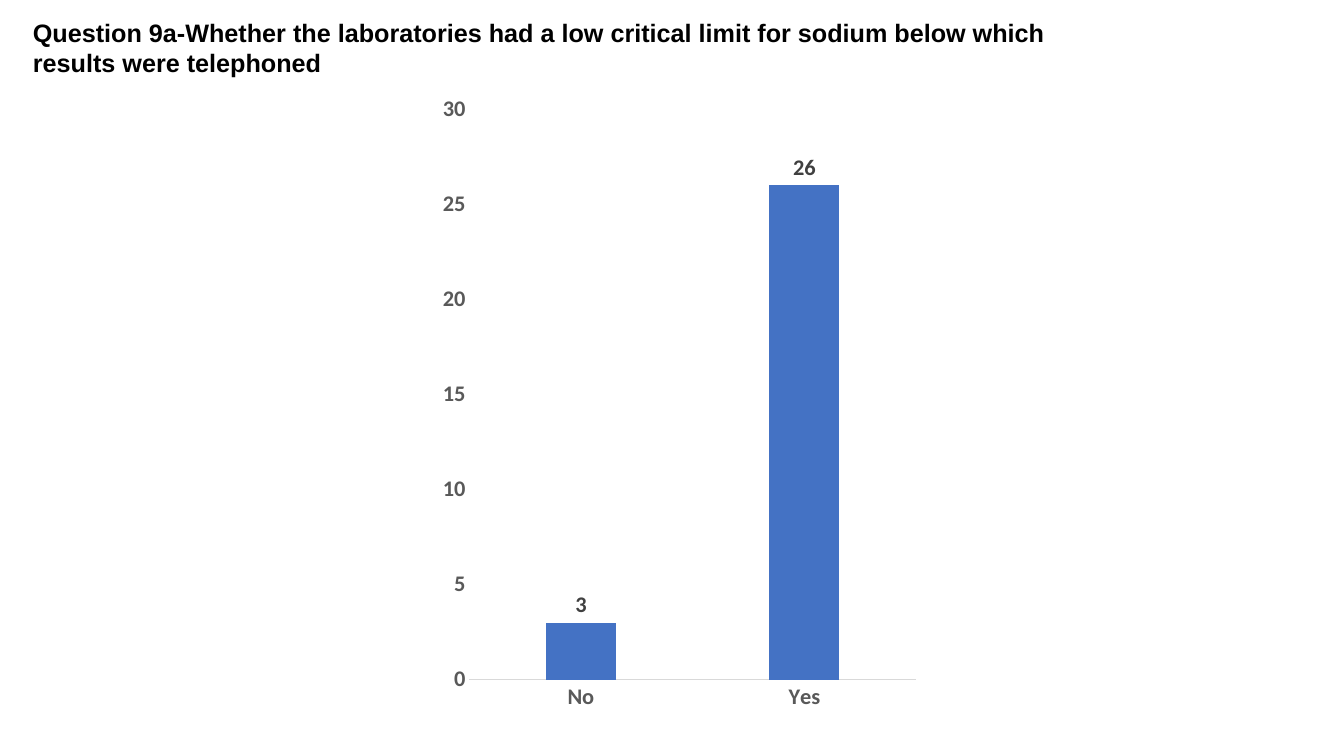
from lxml.etree import SubElement
from pptx import Presentation
from pptx.chart.data import CategoryChartData
from pptx.dml.color import RGBColor
from pptx.enum.chart import XL_CHART_TYPE, XL_LABEL_POSITION, XL_TICK_MARK
from pptx.enum.text import MSO_AUTO_SIZE
from pptx.oxml.ns import qn
from pptx.util import Cm, Pt


def color(hex_code):
    """Turn a hex string into a colour."""
    return RGBColor.from_string(hex_code)


def style_font(font, name, size, hex_code):
    """Apply a bold typeface, size and colour."""
    font.name = name
    font.size = Pt(size)
    font.bold = True
    font.color.rgb = color(hex_code)


def set_plot_layout(chart, x, y, w, h):
    """Fix the inner plot area as fractions of the chart."""
    plot_area = chart.plot_area if hasattr(chart, "plot_area") else chart.element.chart.plotArea
    for previous in plot_area.findall(qn("c:layout")):
        plot_area.remove(previous)
    layout = SubElement(plot_area, qn("c:layout"))
    plot_area.insert(0, layout)
    manual = SubElement(layout, qn("c:manualLayout"))
    settings = {"layoutTarget": "inner", "xMode": "edge", "yMode": "edge",
                "x": x, "y": y, "w": w, "h": h}
    for tag, value in settings.items():
        SubElement(manual, qn(f"c:{tag}")).set("val", str(value))


def add_question(slide, left, top, width, height):
    """Write the survey question in the given box."""
    question = slide.shapes.add_textbox(left, top, width, height).text_frame
    question.word_wrap = True
    question.auto_size = MSO_AUTO_SIZE.SHAPE_TO_FIT_TEXT
    question.text = ("Question 9a-Whether the laboratories had a low critical limit "
                     "for sodium below which\nresults were telephoned")
    for line in question.paragraphs:
        style_font(line.font, "Arial", 18, "000000")


def add_answers_chart(slide, left, top, width, height):
    """Draw the answer counts as columns in the given box."""
    answers = CategoryChartData(number_format="General")
    answers.categories = ["No", "Yes"]
    answers.add_series("Series 1", (3, 26))
    chart = slide.shapes.add_chart(XL_CHART_TYPE.COLUMN_CLUSTERED,
                                   left, top, width, height, answers).chart
    chart.has_legend = False
    chart.has_title = False
    style_font(chart.font, "Calibri", 16, "000000")
    set_plot_layout(chart, 0.083, 0.019, 0.887, 0.92)

    for axis in (chart.category_axis, chart.value_axis):
        axis.has_major_gridlines = False
        axis.major_tick_mark = XL_TICK_MARK.NONE
        axis.minor_tick_mark = XL_TICK_MARK.NONE
        style_font(axis.tick_labels.font, "Calibri", 16, "595959")
    baseline = chart.category_axis.format.line
    baseline.color.rgb = color("D9D9D9")
    baseline.width = Pt(0.75)
    chart.value_axis.format.line.fill.background()
    chart.value_axis.minimum_scale = 0
    chart.value_axis.maximum_scale = 30
    chart.value_axis.major_unit = 5

    columns = chart.plots[0]
    columns.gap_width = 219
    columns.overlap = -27
    columns.vary_by_categories = False
    counts = columns.series[0]
    counts.format.fill.solid()
    counts.format.fill.fore_color.rgb = color("4472C4")
    labels = counts.data_labels
    labels.show_value = True
    labels.position = XL_LABEL_POSITION.OUTSIDE_END
    style_font(labels.font, "Calibri", 16, "404040")


def main():
    """Build and save the slide."""
    presentation = Presentation()
    presentation.slide_width = Cm(33.87)
    presentation.slide_height = Cm(19.05)
    slide = presentation.slides.add_slide(presentation.slide_layouts[6])
    add_answers_chart(slide, Cm(10.77), Cm(2.41), Cm(12.7), Cm(15.67))
    add_question(slide, Cm(0.58), Cm(0.3), Cm(29.92), Cm(1.8))
    presentation.save("out.pptx")


if __name__ == "__main__":
    main()
